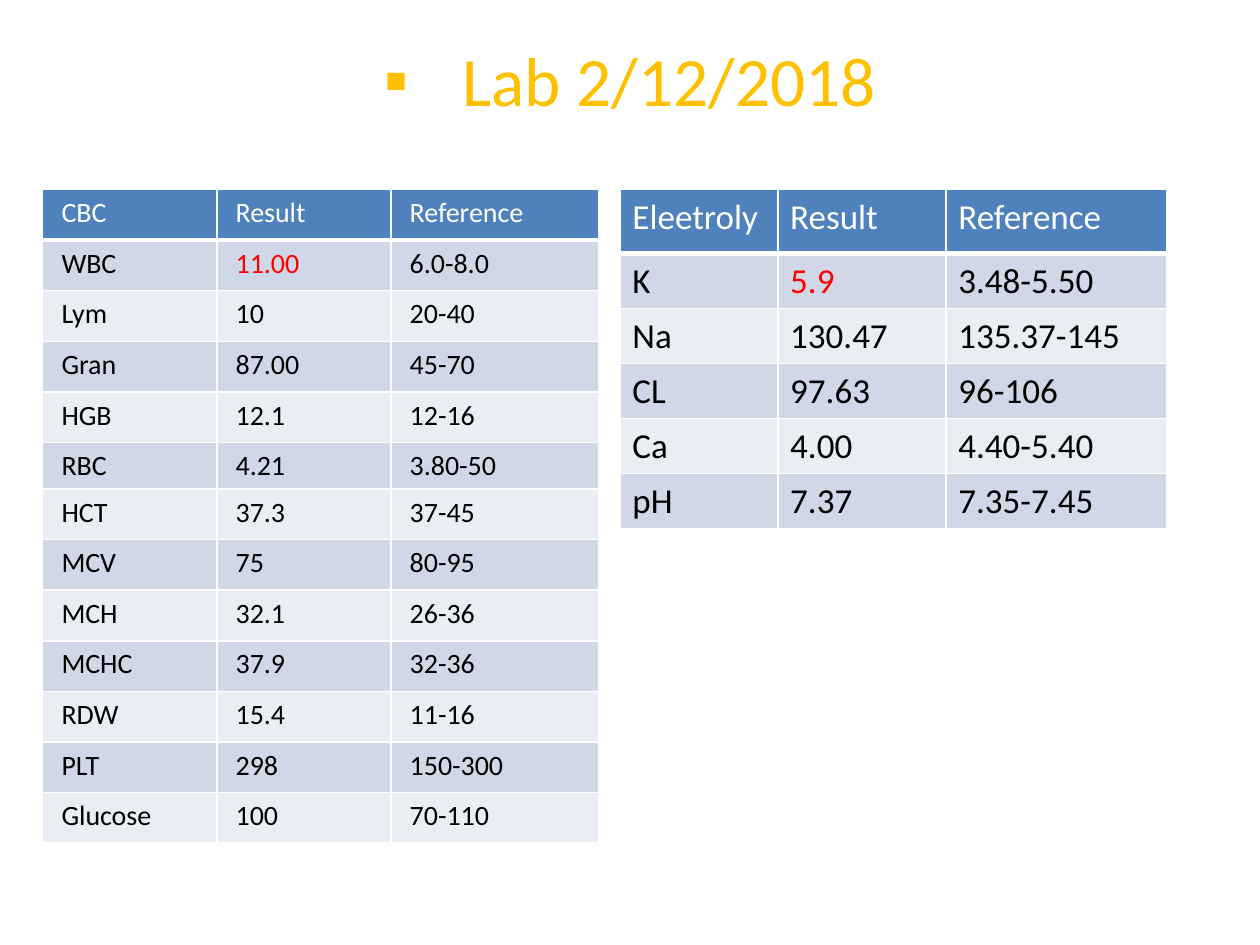
from dataclasses import dataclass

from lxml.etree import SubElement
from pptx import Presentation
from pptx.dml.color import RGBColor
from pptx.enum.text import MSO_ANCHOR, PP_ALIGN
from pptx.oxml import parse_xml
from pptx.oxml.ns import nsdecls, qn
from pptx.util import Cm, Pt


@dataclass(frozen=True)
class Theme:
    font: str = "Calibri"
    title: str = "FFC000"
    header: str = "4F81BD"
    bands: tuple = ("D0D8E8", "E9EDF4")
    light: str = "FFFFFF"
    text: str = "000000"
    alert: str = "FF0000"
    title_size: float = 39.6
    cbc_size: float = 16
    electrolyte_size: float = 20


THEME = Theme()

CBC = [
    ("CBC", "Result", "Reference"),
    ("WBC", "11.00", "6.0-8.0"),
    ("Lym", "10", "20-40"),
    ("Gran", "87.00", "45-70"),
    ("HGB", "12.1", "12-16"),
    ("RBC", "4.21", "3.80-50"),
    ("HCT", "37.3", "37-45"),
    ("MCV", "75", "80-95"),
    ("MCH", "32.1", "26-36"),
    ("MCHC", "37.9", "32-36"),
    ("RDW", "15.4", "11-16"),
    ("PLT", "298", "150-300"),
    ("Glucose", "100", "70-110"),
]
ELECTROLYTES = [
    ("Eleetroly", "Result", "Reference"),
    ("K", "5.9", "3.48-5.50"),
    ("Na", "130.47", "135.37-145"),
    ("CL", "97.63", "96-106"),
    ("Ca", "4.00", "4.40-5.40"),
    ("pH", "7.37", "7.35-7.45"),
]


def write(tf, text, *, size, color, align=PP_ALIGN.LEFT):
    p = tf.paragraphs[0]
    p.alignment = align
    r = p.add_run()
    r.text = text
    r.font.name = THEME.font
    r.font.size = Pt(size)
    r.font.color.rgb = RGBColor.from_string(color)
    return p


def set_borders(cell, color, bottom=1):
    tc_pr = cell._tc.get_or_add_tcPr()
    widths = {"lnL": 1, "lnR": 1, "lnT": 1, "lnB": bottom}
    for i, (side, width) in enumerate(widths.items()):
        tc_pr.insert(i, parse_xml(
            f'<a:{side} {nsdecls("a")} w="{Pt(width)}"><a:solidFill>'
            f'<a:srgbClr val="{color}"/></a:solidFill></a:{side}>'))


class SlideBuilder:
    def __init__(self, slide, theme):
        self.s = slide
        self.theme = theme

    def title(self, text, left, top, width, height):
        sp = self.s.shapes.add_textbox(Cm(left), Cm(top), Cm(width), Cm(height))
        tf = sp.text_frame
        tf.word_wrap = True
        tf.vertical_anchor = MSO_ANCHOR.TOP
        tf.margin_top = 0
        p = write(tf, text, size=self.theme.title_size,
                  color=self.theme.title, align=PP_ALIGN.CENTER)
        p_pr = p._p.get_or_add_pPr()
        p_pr.set("marL", str(Cm(1.58)))
        p_pr.set("indent", str(Cm(-1.58)))
        SubElement(p_pr, qn("a:buFont"), typeface="Arial")
        SubElement(p_pr, qn("a:buChar"), char="▪")

    def table(self, data, left, top, cols, rows, size, inset, alerts):
        t = self.theme
        table = self.s.shapes.add_table(
            len(rows), len(cols), Cm(left), Cm(top),
            Cm(sum(cols)), Cm(sum(rows))).table
        table.first_row = table.horz_banding = False
        for col, width in zip(table.columns, cols):
            col.width = Cm(width)
        for i, (row, height) in enumerate(zip(table.rows, rows)):
            row.height = Cm(height)
            for cell, text in zip(row.cells, data[i]):
                cell.margin_left = cell.margin_right = Cm(inset)
                cell.margin_top = cell.margin_bottom = Cm(0.13)
                fill, color = t.bands[(i - 1) % 2], t.text
                if i == 0:
                    fill, color = t.header, t.light
                elif text in alerts:
                    color = t.alert
                cell.fill.solid()
                cell.fill.fore_color.rgb = RGBColor.from_string(fill)
                set_borders(cell, t.light, bottom=3 if i == 0 else 1)
                write(cell.text_frame, text, size=size, color=color)


def main():
    prs = Presentation()
    prs.slide_width, prs.slide_height = Cm(25.4), Cm(19.05)
    b = SlideBuilder(prs.slides.add_slide(prs.slide_layouts[6]), THEME)

    # Title
    b.title("Lab 2/12/2018", 1.27, 0.76, 22.86, 3.18)

    # Blood count, with a lower RBC row
    b.table(CBC, 0.86, 3.82, cols=[3.51, 3.51, 4.2],
            rows=[1.02] * 5 + [0.85] + [1.02] * 7,
            size=THEME.cbc_size, inset=0.38, alerts={"11.00"})

    # Electrolytes
    b.table(ELECTROLYTES, 12.5, 3.82, cols=[3.18, 3.39, 4.45],
            rows=[1.29] + [1.1] * 5,
            size=THEME.electrolyte_size, inset=0.25, alerts={"5.9"})

    prs.save("out.pptx")


if __name__ == "__main__":
    main()
